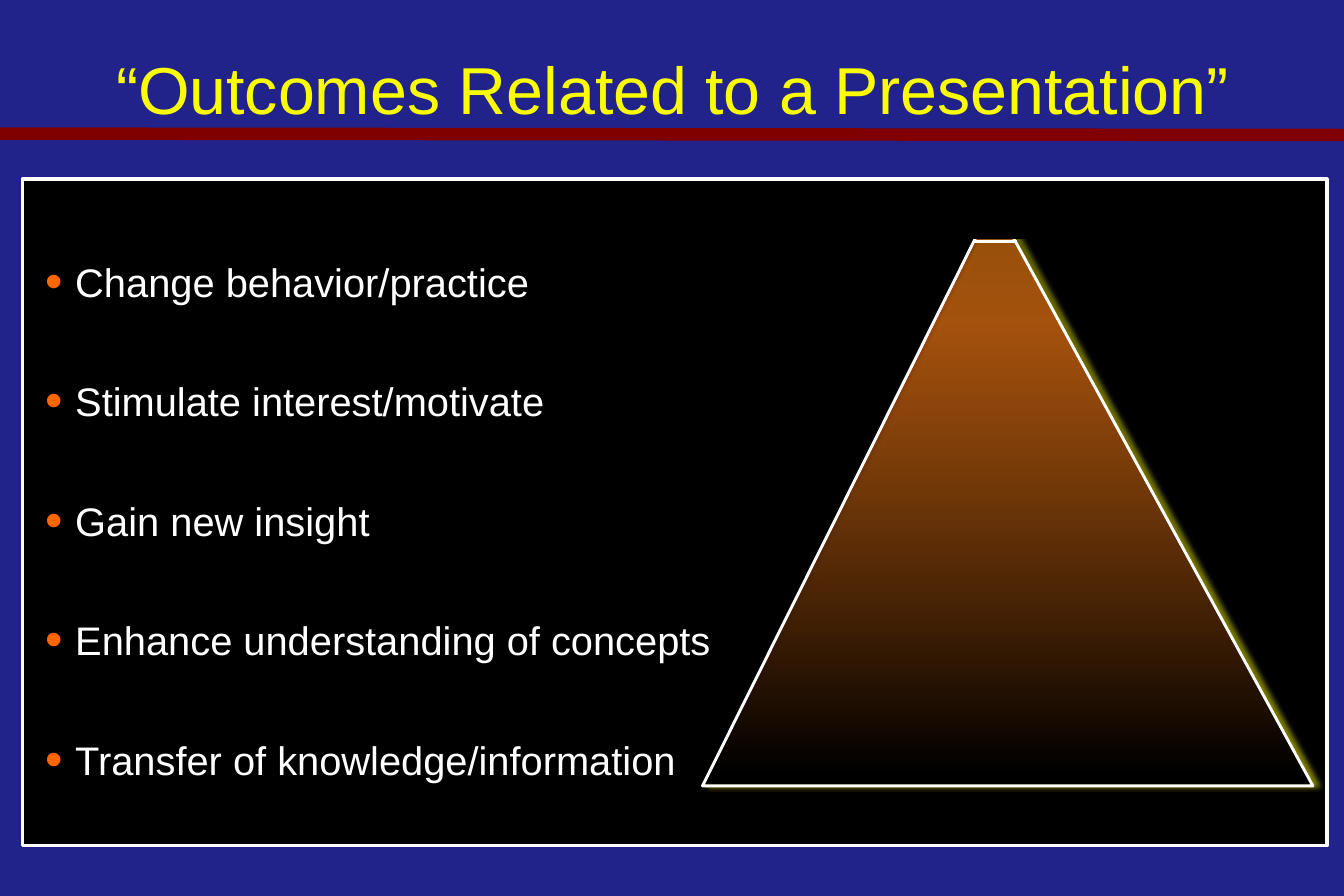
from dataclasses import dataclass

from lxml import etree
from pptx import Presentation
from pptx.dml.color import RGBColor
from pptx.enum.shapes import MSO_CONNECTOR, MSO_SHAPE
from pptx.enum.text import MSO_ANCHOR, MSO_AUTO_SIZE, PP_ALIGN
from pptx.oxml import parse_xml
from pptx.oxml.ns import qn
from pptx.util import Cm, Pt

RECTANGLE = MSO_SHAPE.RECTANGLE
TRIANGLE = MSO_SHAPE.ISOSCELES_TRIANGLE
STRAIGHT = MSO_CONNECTOR.STRAIGHT
TOP, MIDDLE = MSO_ANCHOR.TOP, MSO_ANCHOR.MIDDLE
LEFT, CENTER = PP_ALIGN.LEFT, PP_ALIGN.CENTER
NO_AUTOFIT = MSO_AUTO_SIZE.NONE

NAVY = RGBColor(0x22, 0x22, 0x8B)
BLACK = RGBColor(0, 0, 0)
WHITE = RGBColor(0xFF, 0xFF, 0xFF)
YELLOW = RGBColor(0xFA, 0xFD, 0x00)
GLOW = RGBColor(0xFF, 0xFF, 0x00)
MAROON = RGBColor(0x80, 0, 0)
ORANGE = RGBColor(0xFF, 0x66, 0x00)
BROWN = RGBColor(0xB3, 0x4D, 0x10)

DRAWING = 'xmlns:a="http://schemas.openxmlformats.org/drawingml/2006/main"'
OUTCOMES = [
    "Change behavior/practice",
    "Stimulate interest/motivate",
    "Gain new insight",
    "Enhance understanding of concepts",
    "Transfer of knowledge/information",
]


@dataclass
class Box:
    left: float
    top: float
    width: float
    height: float

    def lengths(self):
        return [Cm(n) for n in (self.left, self.top, self.width, self.height)]


@dataclass
class Panel:
    kind: MSO_SHAPE
    box: Box
    line_width: float


@dataclass
class Rule:
    start: tuple[float, float]
    end: tuple[float, float]
    color: RGBColor
    width: float


FRAME = Panel(RECTANGLE, Box(0.48, 3.81, 27.74, 14.17), 2)
PYRAMID = Panel(TRIANGLE, Box(14.94, 4.29, 12.98, 12.42), 1.75)
TIP_COVER = Panel(RECTANGLE, Box(20.37, 3.89, 1.75, 1.19), 0)
RULES = [
    Rule((0, 2.84), (28.58, 2.87), MAROON, 7.5),
    Rule((20.73, 5.13), (21.62, 5.13), WHITE, 2),
]


def apply_format(target, values: dict) -> None:
    for name, value in values.items():
        setattr(target, name, value)


def add_panel(slide, panel: Panel):
    shape = slide.shapes.add_shape(panel.kind, *panel.box.lengths())
    shape.shadow.inherit = False
    shape.fill.solid()
    shape.fill.fore_color.rgb = BLACK
    if panel.line_width:
        shape.line.color.rgb = WHITE
        shape.line.width = Pt(panel.line_width)
    else:
        shape.line.fill.background()
    return shape


def add_rule(slide, rule: Rule) -> None:
    ends = [Cm(n) for n in rule.start + rule.end]
    connector = slide.shapes.add_connector(STRAIGHT, *ends)
    connector.line.color.rgb = rule.color
    connector.line.width = Pt(rule.width)
    etree.SubElement(connector.element.spPr, qn("a:effectLst"))


def style_pyramid(shape) -> None:
    """Give the pyramid its translucent gradient and yellow glow."""
    shape.adjustments[0] = 0.477
    properties = shape.element.spPr
    stops = "".join(
        f'<a:gs pos="{position * 1000}"><a:srgbClr val="{color}">'
        f'<a:alpha val="{opacity * 1000}"/></a:srgbClr></a:gs>'
        for position, color, opacity in ((0, BROWN, 64), (21, BROWN, 81), (98, BLACK, 100))
    )
    gradient = parse_xml(
        f'<a:gradFill {DRAWING} rotWithShape="1"><a:gsLst>{stops}</a:gsLst>'
        '<a:lin ang="5400000" scaled="0"/></a:gradFill>'
    )
    properties.replace(properties.find(qn("a:solidFill")), gradient)
    properties.find(qn("a:effectLst")).append(parse_xml(
        f'<a:outerShdw {DRAWING} blurRad="{Pt(3)}" dist="{Pt(3)}" dir="{356 * 60000}" '
        f'algn="ctr" rotWithShape="0"><a:srgbClr val="{GLOW}"><a:alpha val="50000"/>'
        '</a:srgbClr></a:outerShdw>'
    ))


def fill_placeholder(shape, box: Box, lines: list[str], anchor, paragraph_format: dict,
                     font_format: dict, color: RGBColor) -> None:
    apply_format(shape, dict(zip(("left", "top", "width", "height"), box.lengths())))
    frame = shape.text_frame
    frame.text = "\n".join(lines)
    apply_format(frame, {
        "word_wrap": True, "auto_size": NO_AUTOFIT, "vertical_anchor": anchor,
        "margin_left": Cm(0.25), "margin_right": Cm(0.25),
        "margin_top": Cm(0.13), "margin_bottom": Cm(0.13),
    })
    for paragraph in frame.paragraphs:
        apply_format(paragraph, paragraph_format)
        font = paragraph.runs[0].font
        apply_format(font, {"name": "Arial", **font_format})
        font.color.rgb = color


def add_bullet(paragraph) -> None:
    properties = paragraph._p.get_or_add_pPr()
    properties.set("marL", str(Cm(0.97)))
    properties.set("indent", str(Cm(-0.64)))
    for markup in (
        f'<a:buClr {DRAWING}><a:srgbClr val="{ORANGE}"/></a:buClr>',
        f'<a:buSzPct {DRAWING} val="125000"/>',
        f'<a:buFont {DRAWING} typeface="Arial"/>',
        f'<a:buChar {DRAWING} char="•"/>',
    ):
        properties.append(parse_xml(markup))


def main() -> None:
    presentation = Presentation()
    presentation.slide_width, presentation.slide_height = Cm(28.58), Cm(19.05)
    slide = presentation.slides.add_slide(presentation.slide_layouts[1])
    slide.background.fill.solid()
    slide.background.fill.fore_color.rgb = NAVY

    title, body = slide.placeholders
    fill_placeholder(
        title, Box(0.43, 0.43, 27.74, 3.18), ["“Outcomes Related to a Presentation”"], MIDDLE,
        {"alignment": CENTER, "line_spacing": 0.8}, {"size": Pt(40)}, YELLOW)
    fill_placeholder(
        body, Box(0.38, 4.24, 19.66, 12.7), OUTCOMES, TOP,
        {"alignment": LEFT, "line_spacing": Pt(60), "space_before": Pt(12)},
        {"size": Pt(24)}, WHITE)
    for paragraph in body.text_frame.paragraphs:
        add_bullet(paragraph)

    frame = add_panel(slide, FRAME)
    title.element.addprevious(frame.element)
    style_pyramid(add_panel(slide, PYRAMID))
    add_panel(slide, TIP_COVER)
    for rule in RULES:
        add_rule(slide, rule)
    presentation.save("out.pptx")


if __name__ == "__main__":
    main()
